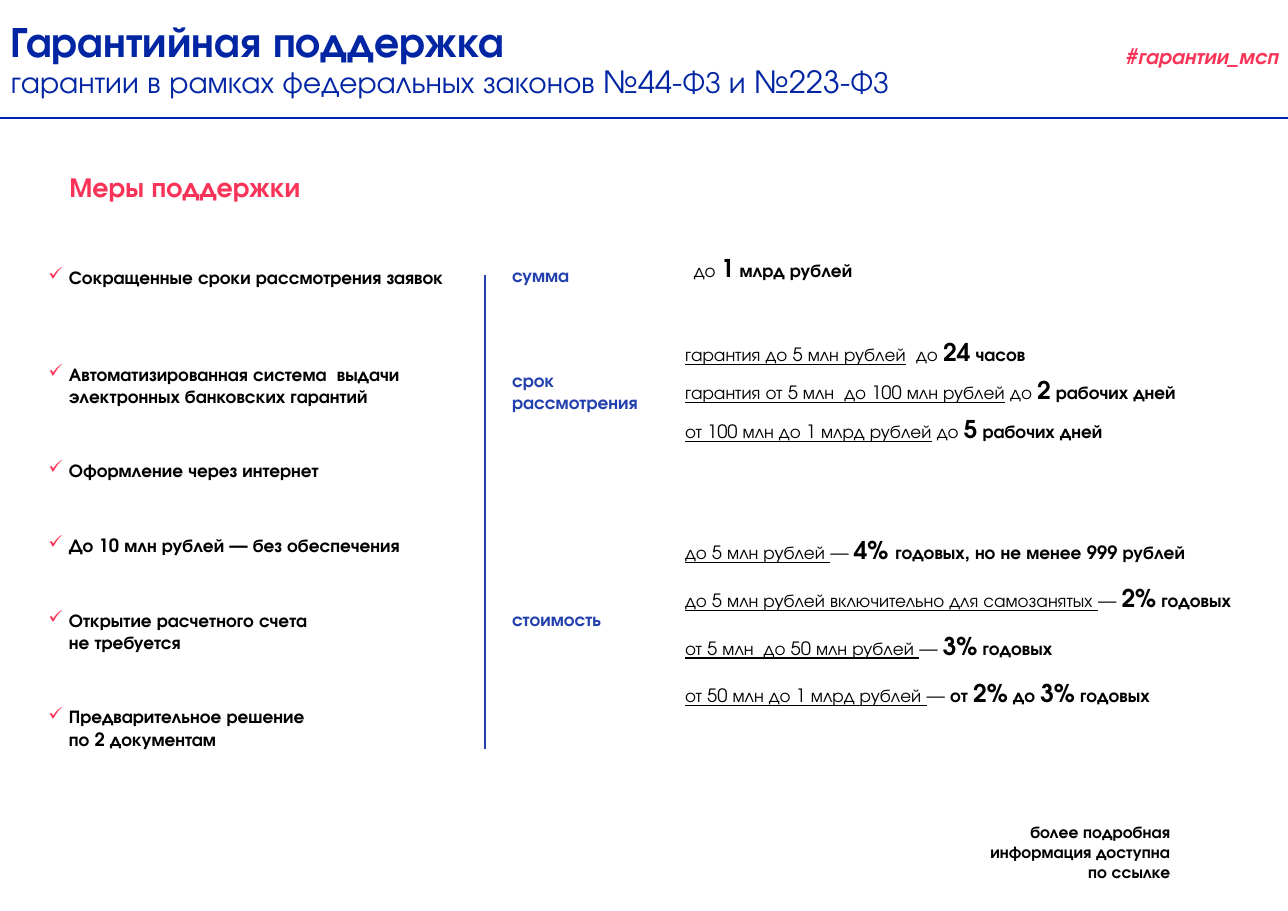
from dataclasses import dataclass, field
from typing import NamedTuple

from lxml.etree import SubElement
from pptx import Presentation
from pptx.dml.color import RGBColor
from pptx.enum.shapes import MSO_CONNECTOR
from pptx.enum.text import MSO_ANCHOR, MSO_AUTO_SIZE, PP_ALIGN
from pptx.oxml.ns import qn
from pptx.util import Pt

FONT = "TeX Gyre Adventor"
NAVY = RGBColor(0x02, 0x25, 0xA3)
RULE_BLUE = RGBColor(0x00, 0x22, 0xA9)
BLUE = RGBColor(0x22, 0x40, 0xAD)
RED = RGBColor(0xF9, 0x34, 0x58)
HASHTAG_RED = RGBColor(0xF8, 0x34, 0x58)
BLACK = RGBColor(0x00, 0x00, 0x00)

# Character formats
TITLE = {"size": Pt(28), "bold": True}
SUBTITLE = {"size": Pt(20), "bold": False}
HEADING = {"size": Pt(18), "bold": True}
HASHTAG = {"size": Pt(14), "bold": True, "italic": True}
BOLD = {"size": Pt(12), "bold": True}
SMALL = {"size": Pt(11), "bold": True}
PLAIN = {"size": Pt(12), "bold": False}
UNDER = {"size": Pt(12), "bold": False, "underline": True}
BIG = {"size": Pt(16), "bold": True}


class Piece(NamedTuple):
    text: str
    style: dict


@dataclass
class TextBlock:
    left: float
    top: float
    width: float
    height: float
    paragraphs: list[list[Piece]]
    color: RGBColor = BLACK
    layout: dict = field(default_factory=dict)
    anchor: MSO_ANCHOR = MSO_ANCHOR.TOP
    bullet: bool = False


class Measure(NamedTuple):
    text: str
    width: float
    height: float


class Rule(NamedTuple):
    start: tuple[float, float]
    end: tuple[float, float]
    color: RGBColor


def add_check_bullet(paragraph) -> None:
    properties = paragraph._p.get_or_add_pPr()
    properties.set("marL", str(Pt(13.5)))
    properties.set("indent", str(-Pt(13.5)))
    bullet_color = SubElement(properties, qn("a:buClr"))
    SubElement(bullet_color, qn("a:srgbClr")).set("val", str(RED))
    SubElement(properties, qn("a:buChar")).set("char", "✓")


def add_piece(paragraph, piece: Piece, color: RGBColor) -> None:
    for index, line in enumerate(piece.text.split("\n")):
        if index:
            paragraph.add_line_break()
        run = paragraph.add_run()
        run.text = line
        run.font.name = FONT
        run.font.color.rgb = color
        for name, value in piece.style.items():
            setattr(run.font, name, value)


def add_text(slide, block: TextBlock) -> None:
    shape = slide.shapes.add_textbox(
        Pt(block.left), Pt(block.top), Pt(block.width), Pt(block.height))
    frame = shape.text_frame
    frame.word_wrap = True
    frame.vertical_anchor = block.anchor
    if block.anchor == MSO_ANCHOR.TOP:
        frame.auto_size = MSO_AUTO_SIZE.SHAPE_TO_FIT_TEXT
    for index, pieces in enumerate(block.paragraphs):
        paragraph = frame.add_paragraph() if index else frame.paragraphs[0]
        for name, value in block.layout.items():
            setattr(paragraph, name, value)
        if block.bullet:
            add_check_bullet(paragraph)
        for piece in pieces:
            add_piece(paragraph, piece, block.color)


def add_rule(slide, rule: Rule) -> None:
    connector = slide.shapes.add_connector(
        MSO_CONNECTOR.STRAIGHT, *map(Pt, rule.start + rule.end))
    connector.line.color.rgb = rule.color
    connector.line.width = Pt(1.5)
    SubElement(connector._element.spPr, qn("a:effectLst"))


# Header and footer
HEADER = [
    TextBlock(0, 18.7, 682, 41, [
        [Piece("Гарантийная поддержка", TITLE)],
        [Piece("гарантии в рамках федеральных законов №44-ФЗ и №223-ФЗ", SUBTITLE)],
    ], NAVY, {"line_spacing": 0.9}, MSO_ANCHOR.MIDDLE),
    TextBlock(689.8, 28.8, 152.6, 20.2, [[Piece("#гарантии_мсп", HASHTAG)]],
              HASHTAG_RED, {"alignment": PP_ALIGN.RIGHT, "line_spacing": 0.75}),
    TextBlock(38.2, 107.3, 322.6, 29, [[Piece("Меры поддержки", HEADING)]], RED),
]
FOOTER = TextBlock(
    625, 550.8, 146.9, 12.2,
    [[Piece("более подробная информация доступна по ссылке", SMALL)]],
    layout={"alignment": PP_ALIGN.RIGHT}, anchor=MSO_ANCHOR.MIDDLE)

RULES = [
    Rule((0, 77), (841.68, 77), RULE_BLUE),
    Rule((316.8, 180), (316.8, 489.6), BLUE),
]

# Support measures, stacked with an equal gap
MEASURES_TOP, MEASURES_GAP = 170.7, 27
MEASURES = [
    Measure("Сокращенные сроки рассмотрения заявок", 291.6, 36),
    Measure("Автоматизированная система  выдачи электронных банковских гарантий", 281.5, 36),
    Measure("Оформление через интернет", 281.5, 22),
    Measure("До 10 млн рублей — без обеспечения", 283.7, 22),
    Measure("Открытие расчетного счета \nне требуется", 247, 36),
    Measure("Предварительное решение \nпо 2 документам", 254.9, 36),
]

# Terms: labels and their values
LABELS = [
    TextBlock(327.6, top, width, height, [[Piece(text, BOLD)]], BLUE)
    for text, top, width, height in [
        ("сумма", 169.2, 68.4, 21.6),
        ("срок рассмотрения", 237.6, 113, 36),
        ("стоимость", 393.8, 83.5, 21.6),
    ]
]
VALUES = [
    TextBlock(446.4, 162, 208.8, 26.6, [
        [Piece("до ", PLAIN), Piece("1", BIG), Piece(" млрд рублей", BOLD)],
    ]),
    TextBlock(440.6, 216.7, 369.4, 77.8, [
        [Piece(amount, UNDER), Piece(link, PLAIN), Piece(number, BIG), Piece(unit, BOLD)]
        for amount, link, number, unit in [
            ("гарантия до 5 млн рублей", "  до ", "24", " часов"),
            ("гарантия от 5 млн  до 100 млн рублей", " до ", "2", " рабочих дней"),
            ("от 100 млн до 1 млрд рублей", " до ", "5", " рабочих дней"),
        ]
    ], layout={"space_after": Pt(6)}),
    TextBlock(440.6, 346.3, 402.5, 121, [
        [Piece(amount, UNDER), Piece("— ", PLAIN), *rate]
        for amount, rate in [
            ("до 5 млн рублей ",
             [Piece("4% ", BIG), Piece("годовых, но не менее 999 рублей", BOLD)]),
            ("до 5 млн рублей включительно для самозанятых ",
             [Piece("2%", BIG), Piece(" годовых", BOLD)]),
            ("от 5 млн  до 50 млн рублей ",
             [Piece("3%", BIG), Piece(" годовых", BOLD)]),
            ("от 50 млн до 1 млрд рублей ",
             [Piece("от ", BOLD), Piece("2%", BIG), Piece(" до ", BOLD),
              Piece("3%", BIG), Piece(" годовых", BOLD)]),
        ]
    ], layout={"space_after": Pt(12)}),
]


def add_measures(slide) -> None:
    top = MEASURES_TOP
    for measure in MEASURES:
        add_text(slide, TextBlock(24.5, top, measure.width, measure.height,
                                  [[Piece(measure.text, BOLD)]], bullet=True))
        top += measure.height + MEASURES_GAP


def main() -> None:
    presentation = Presentation()
    presentation.slide_width = Pt(841.68)
    presentation.slide_height = Pt(595.44)
    slide = presentation.slides.add_slide(presentation.slide_layouts[6])
    for rule in RULES:
        add_rule(slide, rule)
    add_measures(slide)
    for block in [*HEADER, *LABELS, *VALUES, FOOTER]:
        add_text(slide, block)
    presentation.save("out.pptx")


if __name__ == "__main__":
    main()
